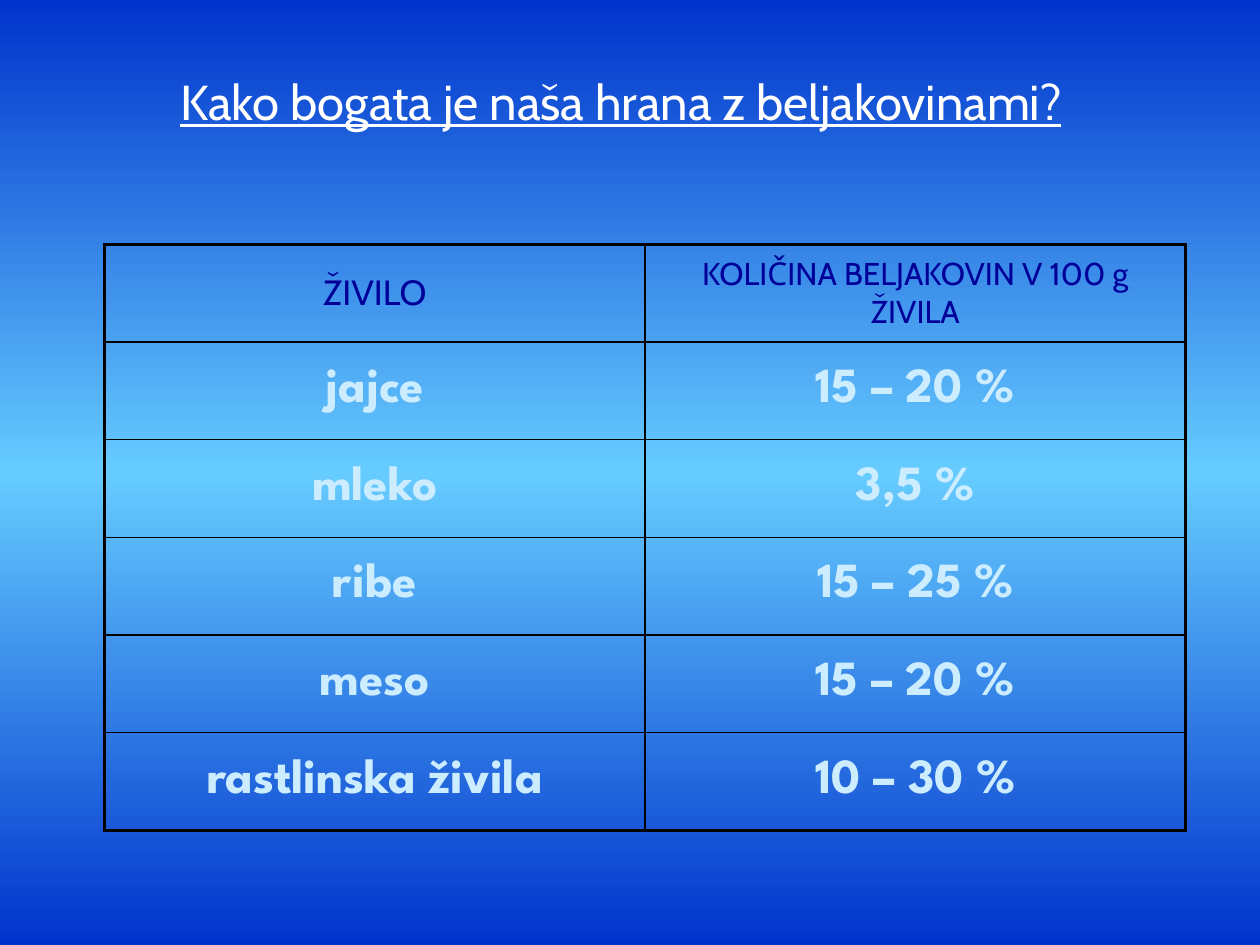
from copy import deepcopy

from lxml import etree
from pptx import Presentation
from pptx.dml.color import RGBColor
from pptx.enum.text import MSO_ANCHOR, PP_ALIGN
from pptx.oxml.ns import qn
from pptx.util import Inches, Pt

CENTER = PP_ALIGN.CENTER
MIDDLE = MSO_ANCHOR.MIDDLE
COLORS = {
    "edge": "0033CC",
    "glow": "66CCFF",
    "title": "FFFFFF",
    "header": "000099",
    "body": "CCECFF",
    "border": "000000",
}
ROWS = [
    ("ŽIVILO", "KOLIČINA BELJAKOVIN V 100 g ŽIVILA"),
    ("jajce", "15 – 20 %"),
    ("mleko", "3,5 %"),
    ("ribe", "15 – 25 %"),
    ("meso", "15 – 20 %"),
    ("rastlinska živila", "10 – 30 %"),
]


def style_font(font, name, size, color, bold=False):
    font.name = name
    font.size = Pt(size)
    font.bold = bold
    font.color.rgb = RGBColor.from_string(COLORS[color])


def add_border(cell, side, width):
    line = etree.SubElement(cell._tc.get_or_add_tcPr(), qn(f"a:ln{side}"), w=str(Pt(width)))
    fill = etree.SubElement(line, qn("a:solidFill"))
    etree.SubElement(fill, qn("a:srgbClr"), val=COLORS["border"])


deck = Presentation()
deck.slide_width = Inches(10)
deck.slide_height = Inches(7.5)
page = deck.slides.add_slide(deck.slide_layouts[6])

# Background: dark edges with a bright band across the middle
background = page.background.fill
background.gradient()
background.gradient_angle = 270
first_stop = page.element.find(".//" + qn("a:gs"))
first_stop.addnext(deepcopy(first_stop))
for stop, position, color in zip(background.gradient_stops, (0, 0.5, 1), ("edge", "glow", "edge")):
    stop.position = position
    stop.color.rgb = RGBColor.from_string(COLORS[color])

# Title
box = page.shapes.add_textbox(Inches(0.75), Inches(0.52), Inches(8.43), Inches(1.03))
box.text_frame.word_wrap = True
para = box.text_frame.paragraphs[0]
para.alignment = CENTER
for text, size, underline in (("Kako bogata je naša hrana z beljakovinami?", 28, True), (" ", 24, False)):
    span = para.add_run()
    span.text = text
    style_font(span.font, "Cabin", size, "title")
    span.font.underline = underline

# Table
frame = page.shapes.add_table(len(ROWS), 2, Inches(0.83), Inches(1.94), Inches(8.58), Inches(4.65))
table = frame.table
table.horz_banding = False
last_row = len(ROWS) - 1
for r, row in enumerate(ROWS):
    for c, text in enumerate(row):
        cell = table.cell(r, c)
        cell.text = text
        cell.vertical_anchor = MIDDLE
        para = cell.text_frame.paragraphs[0]
        para.alignment = CENTER
        if r == 0:
            style_font(para.font, "Cabin", (20, 18)[c], "header")
        else:
            style_font(para.font, "League Spartan", 28, "body", bold=True)
        outer_sides = {"L": c == 0, "R": c == 1, "T": r == 0, "B": r == last_row}
        for side, is_outer in outer_sides.items():
            add_border(cell, side, 2.25 if is_outer else 1)
        cell.fill.background()

deck.save("out.pptx")
